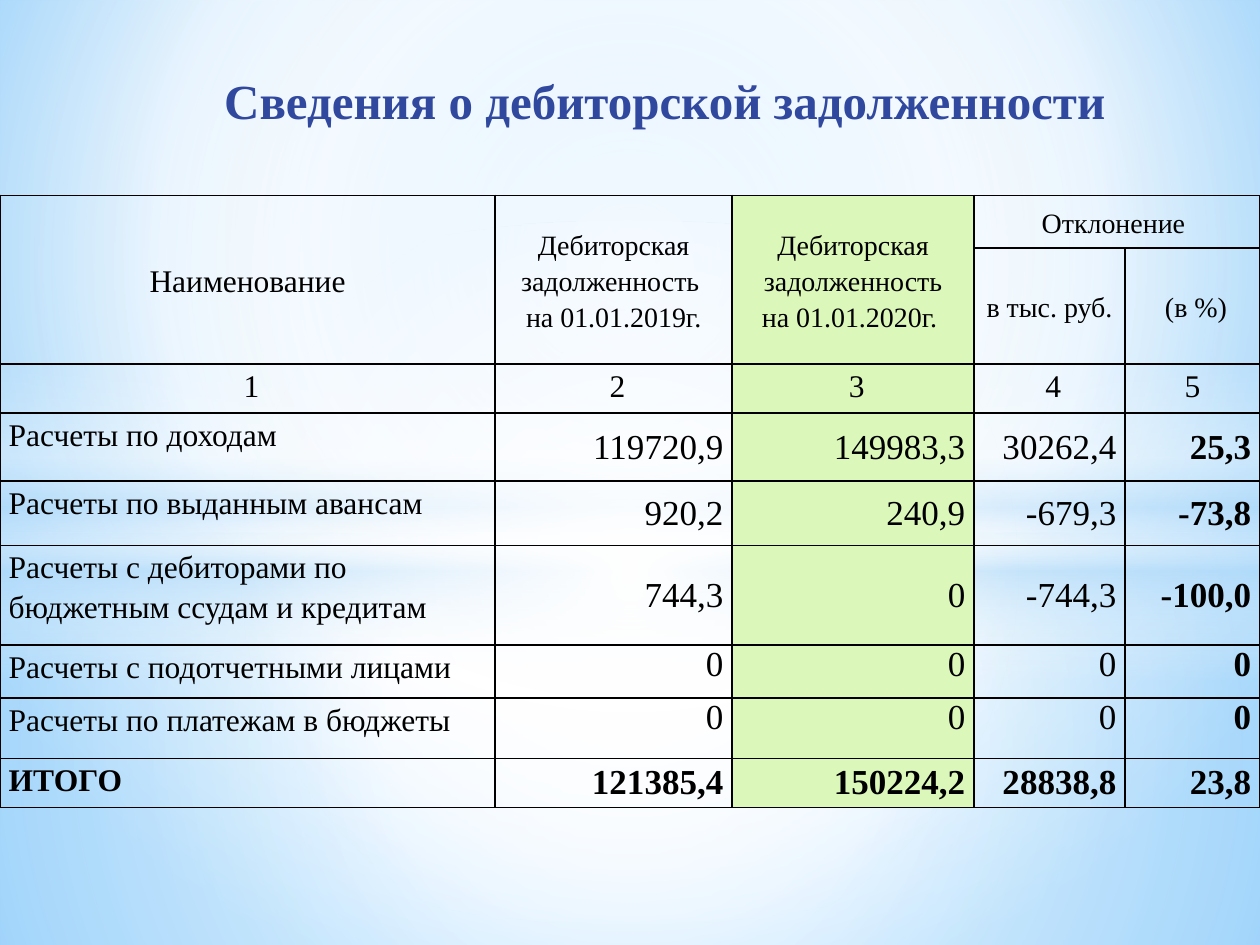
from pptx import Presentation
from pptx.dml.color import RGBColor
from pptx.enum.shapes import MSO_SHAPE
from pptx.enum.text import MSO_ANCHOR, PP_ALIGN
from pptx.oxml import parse_xml
from pptx.oxml.ns import nsdecls, qn
from pptx.util import Pt

FONT = "Times New Roman"
BLACK = RGBColor(0x00, 0x00, 0x00)
WHITE = RGBColor(0xFF, 0xFF, 0xFF)
TITLE_BLUE = RGBColor(0x31, 0x48, 0x9F)
SKY = RGBColor(0x9E, 0xD5, 0xFF)
DEEP_SKY = RGBColor(0x5B, 0xB9, 0xFF)
HAZE = RGBColor(0xB4, 0xDC, 0xFA)
GREEN = RGBColor(0xDC, 0xF7, 0xBA)

CENTRE, MIDDLE = (50, 50, 50, 50), MSO_ANCHOR.MIDDLE
COLUMN_WIDTHS = [283, 135.4, 138.2, 86.4, 77]
ROW_HEIGHTS = [30.2, 49, 28.1, 38.9, 36.7, 56.9, 30.2, 34.6, 28.1]
CURRENT_YEAR = 2

# (row, column, lines, font size)
HEADINGS = [
    (0, 0, ["Наименование"], 18),
    (0, 1, ["Дебиторская задолженность ", "на 01.01.2019г."], 16),
    (0, 2, ["Дебиторская задолженность", "на 01.01.2020г. "], 16),
    (0, 3, ["Отклонение "], 16),
    (1, 3, ["в тыс. руб."], 16),
    (1, 4, [" (в %)"], 16),
]
# (label, values, label alignment, value anchor)
LEFT, JUSTIFY, TOP = PP_ALIGN.LEFT, PP_ALIGN.JUSTIFY, MSO_ANCHOR.TOP
DEBTS = [
    ("Расчеты по доходам", ["119720,9", "149983,3", "30262,4", "25,3"], LEFT, MIDDLE),
    ("Расчеты по выданным авансам", ["920,2", "240,9", "-679,3", "-73,8"], LEFT, MIDDLE),
    ("Расчеты с дебиторами по бюджетным ссудам и кредитам",
     ["744,3", "0", "-744,3", "-100,0"], LEFT, MIDDLE),
    ("Расчеты с подотчетными лицами", ["0"] * 4, JUSTIFY, TOP),
    ("Расчеты по платежам в бюджеты", ["0"] * 4, JUSTIFY, TOP),
    ("ИТОГО", ["121385,4", "150224,2", "28838,8", "23,8"], JUSTIFY, MIDDLE),
]


def set_format(target, values):
    for name, value in values.items():
        setattr(target, name, value)


def set_gradient(owner, fill, stops, focus=None):
    """Stops are (position, colour, opacity) in percent; no focus means vertical."""
    fill.gradient()
    stop_xml = "".join(
        f'<a:gs pos="{position * 1000}"><a:srgbClr val="{colour}">'
        f'<a:alpha val="{opacity * 1000}"/></a:srgbClr></a:gs>'
        for position, colour, opacity in stops)
    if focus:
        sides = " ".join(f'{side}="{value * 1000}"' for side, value in zip("ltrb", focus))
        direction = f'<a:path path="circle"><a:fillToRect {sides}/></a:path>'
    else:
        direction = '<a:lin ang="5400000" scaled="0"/>'
    old = owner.find(".//" + qn("a:gradFill"))
    old.getparent().replace(old, parse_xml(
        f'<a:gradFill {nsdecls("a")} rotWithShape="1"><a:gsLst>{stop_xml}</a:gsLst>'
        f'{direction}</a:gradFill>'))


def add_glow(page, kind, box, stops, focus=None):
    shape = page.shapes.add_shape(kind, *map(Pt, box))
    shape.shadow.inherit = False
    shape.line.fill.background()
    set_gradient(shape._element.spPr, shape.fill, stops, focus)


def add_backdrop(page, box):
    left, top, width, height = box
    background = page.background.fill
    set_gradient(page._element, background,
                 [(0, SKY, 100), (60, WHITE, 100), (100, DEEP_SKY, 100)], (20, 10, 20, 60))
    split = 304.6
    add_glow(page, MSO_SHAPE.RECTANGLE, (left, top + split, width, height - split),
             [(0, WHITE, 91), (37, WHITE, 76), (100, HAZE, 79)], CENTRE)
    add_glow(page, MSO_SHAPE.RECTANGLE, (left, top, width, split),
             [(0, WHITE, 89), (48, WHITE, 62), (100, HAZE, 79)], CENTRE)
    add_glow(page, MSO_SHAPE.RECTANGLE, (left, top + 208.8, width, 180),
             [(0, WHITE, 0), (29, WHITE, 30), (45, HAZE, 40),
              (55, WHITE, 26), (65, HAZE, 60), (100, WHITE, 0)])
    add_glow(page, MSO_SHAPE.OVAL, (left, top + 126, width, 401.8),
             [(0, WHITE, 100), (54, WHITE, 0)], CENTRE)


def write_lines(frame, lines, size, align, bold=False, colour=BLACK, spacing=None,
                margin=0, indent=0):
    for index, line in enumerate(lines):
        para = frame.add_paragraph() if index else frame.paragraphs[0]
        set_format(para, {"alignment": align, "line_spacing": spacing})
        properties = para._p.get_or_add_pPr()
        properties.set("marL", str(Pt(margin)))
        properties.set("indent", str(Pt(indent)))
        span = para.add_run()
        span.text = line
        set_format(span.font, {"name": FONT, "size": Pt(size), "bold": bold})
        span.font.color.rgb = colour


def add_title(page, box):
    frame = page.shapes.add_textbox(*map(Pt, box)).text_frame
    set_format(frame, {"word_wrap": True, "vertical_anchor": MIDDLE})
    write_lines(frame, ["Сведения о дебиторской задолженности"], 28, PP_ALIGN.CENTER,
                bold=True, colour=TITLE_BLUE, margin=14.4)


def style_cell(cell, column):
    set_format(cell, {"margin_left": Pt(5), "margin_right": Pt(5),
                      "margin_top": 0, "margin_bottom": 0})
    properties = cell._tc.get_or_add_tcPr()
    for edge in ("lnL", "lnR", "lnT", "lnB"):
        properties.append(parse_xml(
            f'<a:{edge} {nsdecls("a")} w="{Pt(1)}"><a:solidFill>'
            f'<a:srgbClr val="{BLACK}"/></a:solidFill></a:{edge}>'))
    if column == CURRENT_YEAR:
        cell.fill.solid()
        cell.fill.fore_color.rgb = GREEN
    else:
        cell.fill.background()


def add_debt_table(page, box):
    table = page.shapes.add_table(len(ROW_HEIGHTS), len(COLUMN_WIDTHS),
                                  *map(Pt, box)).table
    set_format(table, {"first_row": False, "horz_banding": False})
    for column, width in zip(table.columns, COLUMN_WIDTHS):
        column.width = Pt(width)
    for row, height in zip(table.rows, ROW_HEIGHTS):
        row.height = Pt(height)
        for number, cell in enumerate(row.cells):
            style_cell(cell, number)

    # Two-level heading
    for number in range(3):
        table.cell(0, number).merge(table.cell(1, number))
    table.cell(0, 3).merge(table.cell(0, 4))
    for row, column, lines, size in HEADINGS:
        cell = table.cell(row, column)
        cell.vertical_anchor = MIDDLE
        write_lines(cell.text_frame, lines, size, PP_ALIGN.CENTER, spacing=1.15)

    # Column numbers
    for number in range(5):
        write_lines(table.cell(2, number).text_frame, [str(number + 1)], 18,
                    PP_ALIGN.CENTER, spacing=1.15, indent=4.3 if number < 4 else 0)

    # Debts and total
    for row, (label, values, align, anchor) in enumerate(DEBTS, start=3):
        total = row == len(ROW_HEIGHTS) - 1
        write_lines(table.cell(row, 0).text_frame, [label], 18, align,
                    bold=total, spacing=1.15)
        for column, value in enumerate(values, start=1):
            cell = table.cell(row, column)
            cell.vertical_anchor = anchor
            write_lines(cell.text_frame, [value], 20, PP_ALIGN.RIGHT,
                        bold=total or column == 4)


def main():
    deck = Presentation()
    set_format(deck, {"slide_width": Pt(720), "slide_height": Pt(540)})
    page = deck.slides.add_slide(deck.slide_layouts[6])
    add_backdrop(page, (0, 0, 720, 540))
    add_title(page, (25.2, 37.4, 694.8, 39.6))
    add_debt_table(page, (0, 111.6, 720, 333.4))
    deck.save("out.pptx")


if __name__ == "__main__":
    main()
